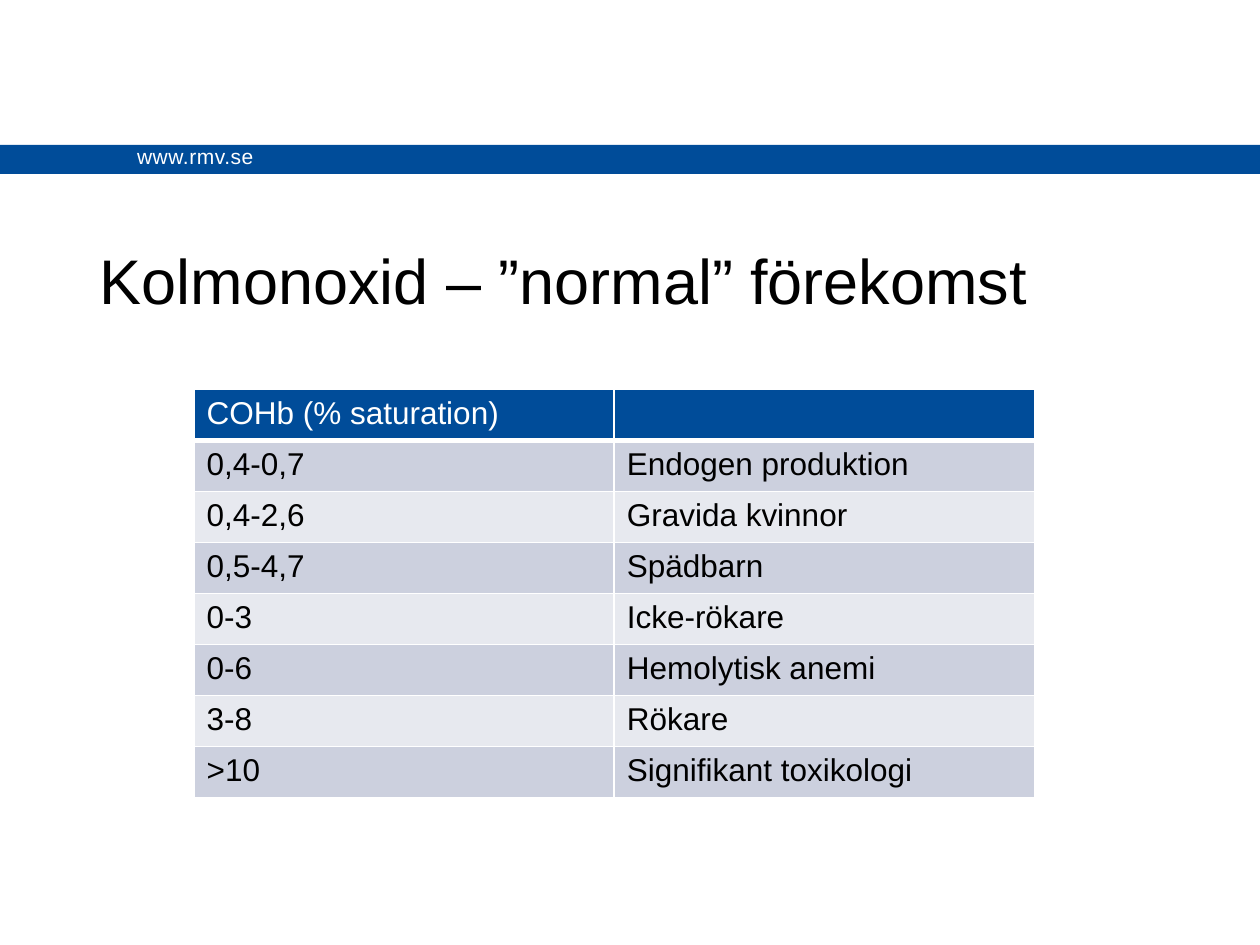
from pptx import Presentation
from pptx.dml.color import RGBColor
from pptx.enum import shapes, text
from pptx.oxml import parse_xml
from pptx.oxml.ns import nsdecls
from pptx.util import Inches, Pt

COLORS = {
    "blue": "004C99",
    "white": "FFFFFF",
    "black": "000000",
    "odd_row": "CCD0DE",
    "even_row": "E7E9EF",
}
FONT = "Arial"
ROWS = [
    ("COHb (% saturation)", ""),
    ("0,4-0,7", "Endogen produktion"),
    ("0,4-2,6", "Gravida kvinnor"),
    ("0,5-4,7", "Spädbarn"),
    ("0-3", "Icke-rökare"),
    ("0-6", "Hemolytisk anemi"),
    ("3-8", "Rökare"),
    (">10", "Signifikant toxikologi"),
]


def rgb(name):
    return RGBColor.from_string(COLORS[name])


def format_text(text_frame, size, color):
    for paragraph in text_frame.paragraphs:
        paragraph.font.size = Pt(size)
        for run in paragraph.runs:
            run.font.name = FONT
            run.font.size = Pt(size)
            run.font.bold = False
            run.font.color.rgb = rgb(color)


def add_address_band(slide, left, top, width, height):
    band = slide.shapes.add_shape(
        shapes.MSO_SHAPE.RECTANGLE, left, top, width, height)
    band.shadow.inherit = False
    band.fill.solid()
    band.fill.fore_color.rgb = rgb("blue")
    band.line.fill.background()

    address = slide.shapes.add_textbox(
        left + Inches(0.99), top - Inches(0.06), Inches(1.13), Inches(0.3))
    frame = address.text_frame
    frame.word_wrap = False
    frame.auto_size = text.MSO_AUTO_SIZE.SHAPE_TO_FIT_TEXT
    frame.text = "www.rmv.se"
    format_text(frame, 12, "white")
    frame.paragraphs[0].runs[0].font._element.set("spc", "30")


def place_title(slide, left, top, width, height):
    title = slide.shapes.title
    title.left, title.top, title.width, title.height = left, top, width, height
    frame = title.text_frame
    frame.text = "Kolmonoxid – ”normal” förekomst"
    frame.word_wrap = True
    frame.auto_size = text.MSO_AUTO_SIZE.NONE
    frame.vertical_anchor = text.MSO_ANCHOR.TOP
    frame.margin_top = Inches(0.08)
    frame.paragraphs[0].alignment = text.PP_ALIGN.LEFT
    format_text(frame, 36, "black")


def set_borders(cell, **widths):
    """Draw white borders, given in points per side, beneath the cell's fill."""
    properties = cell._tc.get_or_add_tcPr()
    for position, side in enumerate("LRTB"):
        properties.insert(position, parse_xml(
            f'<a:ln{side} {nsdecls("a")} w="{Pt(widths.get(side, 1))}">'
            f'<a:solidFill><a:srgbClr val="{COLORS["white"]}"/></a:solidFill>'
            f'</a:ln{side}>'))


def add_saturation_table(slide, left, top, width, height):
    table = slide.shapes.add_table(
        len(ROWS), len(ROWS[0]), left, top, width, height).table
    for row_index, row in enumerate(ROWS):
        if row_index == 0:
            fill, color, widths = "blue", "white", {"B": 3}
        else:
            fill = "odd_row" if row_index % 2 else "even_row"
            color = "black"
            widths = {"T": 3} if row_index == 1 else {}
        for column_index, value in enumerate(row):
            cell = table.cell(row_index, column_index)
            cell.text = value
            format_text(cell.text_frame, 18, color)
            cell.fill.solid()
            cell.fill.fore_color.rgb = rgb(fill)
            set_borders(cell, **widths)


def main():
    presentation = Presentation()
    presentation.slide_width = Inches(10)
    presentation.slide_height = Inches(7.5)
    slide = presentation.slides.add_slide(presentation.slide_layouts[5])
    add_address_band(slide, 0, Inches(1.15), Inches(10), Inches(0.23))
    place_title(slide, Inches(0.69), Inches(1.84), Inches(8.18), Inches(0.89))
    add_saturation_table(
        slide, Inches(1.54), Inches(3.09), Inches(6.67), Inches(3.24))
    presentation.save("out.pptx")


if __name__ == "__main__":
    main()
